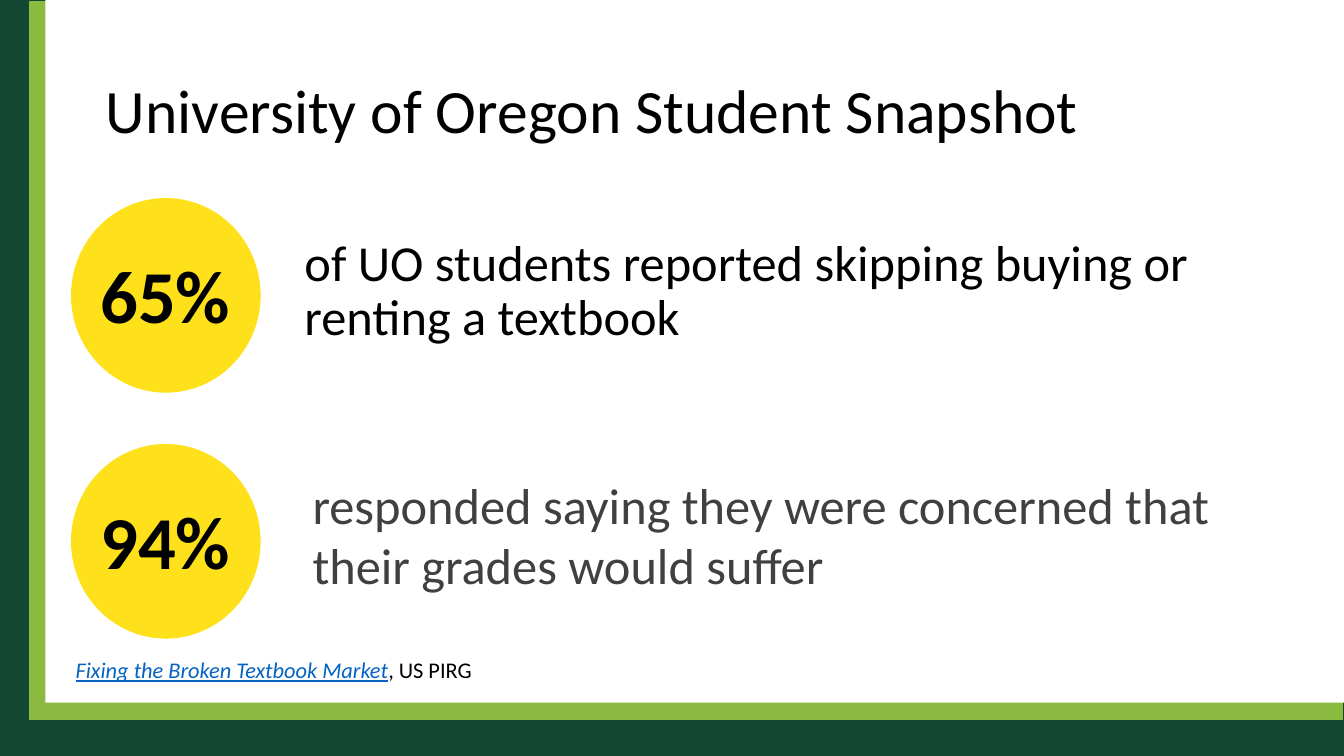
from pptx import Presentation
from pptx.dml.color import RGBColor
from pptx.enum.shapes import MSO_SHAPE
from pptx.enum.text import MSO_ANCHOR, PP_ALIGN
from pptx.util import Inches, Pt

RECT, OVAL = MSO_SHAPE.RECTANGLE, MSO_SHAPE.OVAL
TOP, MIDDLE = MSO_ANCHOR.TOP, MSO_ANCHOR.MIDDLE
LEFT, CENTER = PP_ALIGN.LEFT, PP_ALIGN.CENTER

DARK_GREEN = RGBColor(0x12, 0x47, 0x34)
LIGHT_GREEN = RGBColor(0x8A, 0xBB, 0x40)
YELLOW = RGBColor(0xFE, 0xE1, 0x1A)
WHITE = RGBColor(0xFF, 0xFF, 0xFF)
BLACK = RGBColor(0x00, 0x00, 0x00)
GRAY = RGBColor(0x40, 0x40, 0x41)
LINK_BLUE = RGBColor(0x05, 0x63, 0xC1)

SLIDE_W, SLIDE_H = 13.33, 7.5
INSET = Inches(0.13)


def add_block(s, kind, box, fill, line=None):
    sp = s.shapes.add_shape(kind, *map(Inches, box))
    sp.shadow.inherit = False
    sp.fill.solid()
    sp.fill.fore_color.rgb = fill
    if line is None:
        sp.line.fill.background()
    else:
        sp.line.color.rgb = line
        sp.line.width = Pt(0.75)


def add_text(s, box, runs, size, anchor=TOP, align=LEFT, spacing=1.0):
    tf = s.shapes.add_textbox(*map(Inches, box)).text_frame
    frame = {"word_wrap": True, "vertical_anchor": anchor}
    for side in ("left", "top", "right", "bottom"):
        frame[f"margin_{side}"] = INSET
    for name, value in frame.items():
        setattr(tf, name, value)
    p = tf.paragraphs[0]
    p.alignment = align
    p.line_spacing = spacing
    for text, color, styles in runs:
        r = p.add_run()
        r.text = text
        r.font.color.rgb = color
        font = {"name": "Calibri", "size": Pt(size), **styles}
        for name, value in font.items():
            setattr(r.font, name, value)


def add_frame(s):
    s.background.fill.solid()
    s.background.fill.fore_color.rgb = DARK_GREEN
    add_block(s, RECT, (0.28, 0, SLIDE_W - 0.28, 7.15), LIGHT_GREEN, DARK_GREEN)
    add_block(s, RECT, (0.45, 0, SLIDE_W - 0.45, 6.97), WHITE)


def add_statistic(s, box, percent, statement, color, text_box, spacing):
    x, y, w, h = box
    add_block(s, OVAL, box, YELLOW, YELLOW)
    add_text(s, (x - 0.08, y + 0.37, w + 0.15, 1.29),
             [(percent, BLACK, {"bold": True})], 53.3, align=CENTER)
    dx, dy, text_w, text_h = text_box
    add_text(s, (x + dx, y + dy, text_w, text_h),
             [(statement, color, {})], 36, spacing=spacing)


def add_source(s, box):
    add_text(s, box, [
        ("Fixing the Broken Textbook Market", LINK_BLUE,
         {"italic": True, "underline": True}),
        (", US PIRG", BLACK, {}),
    ], 16)


def main():
    prs = Presentation()
    prs.slide_width, prs.slide_height = Inches(SLIDE_W), Inches(SLIDE_H)
    s = prs.slides.add_slide(prs.slide_layouts[6])
    add_frame(s)
    add_text(s, (0.92, 0.4, 11.5, 1.45),
             [("University of Oregon Student Snapshot", BLACK, {})],
             44, anchor=MIDDLE, spacing=0.9)
    statistics = [
        ("65%", "of UO students reported skipping buying or renting a textbook",
         BLACK, (2.18, 0.26, 9.53, 1.66), 0.9),
        ("94%", "responded saying they were concerned that their grades would suffer",
         GRAY, (2.26, 0.16, 9.67, 1.61), 1.0),
    ]
    for i, statistic in enumerate(statistics):
        add_statistic(s, (0.71, 1.97 + i * 2.44, 1.87, 1.92), *statistic)
    add_source(s, (0.62, 6.38, 6.24, 0.54))
    prs.save("out.pptx")


if __name__ == "__main__":
    main()
